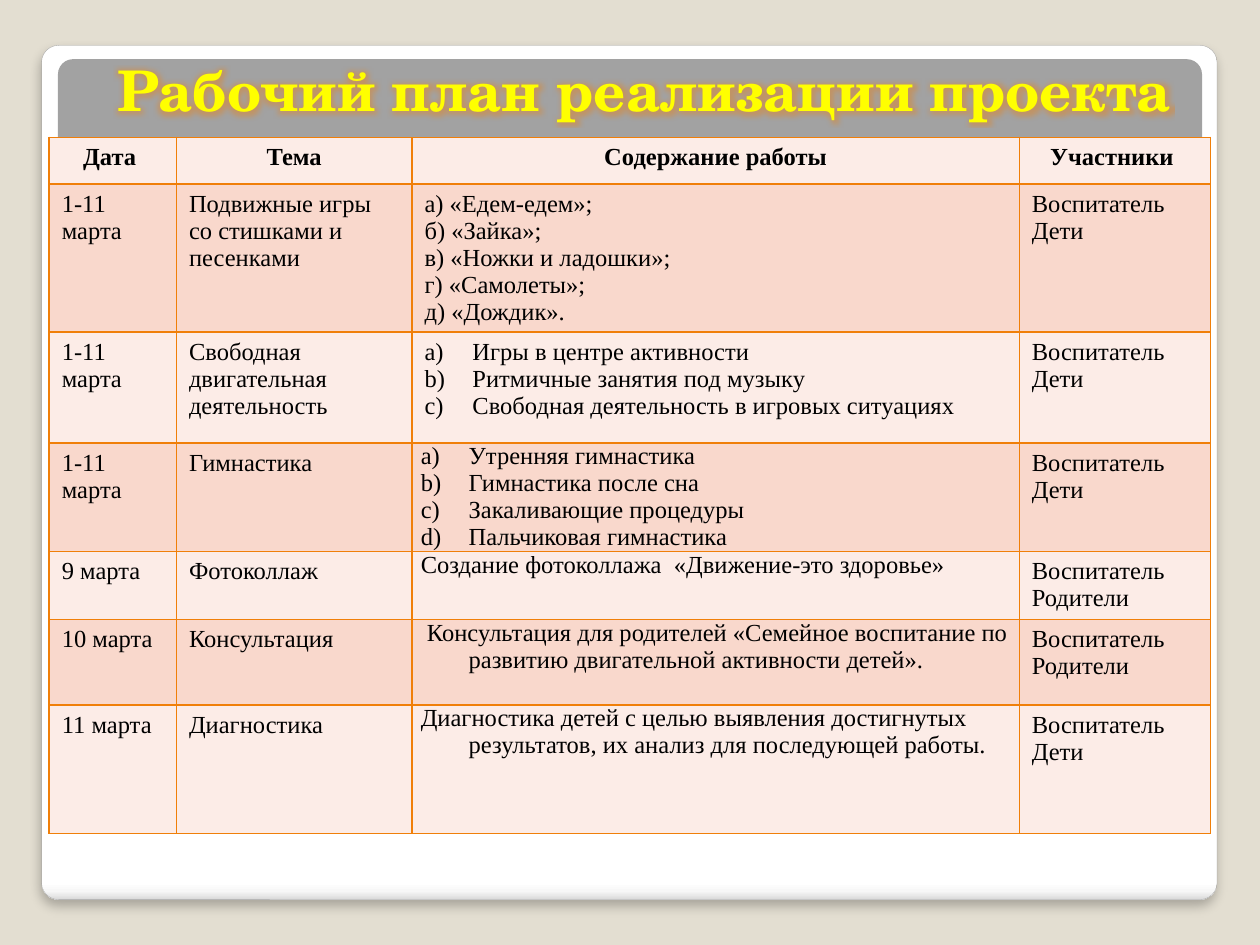
from pptx import Presentation
from pptx.dml.color import RGBColor
from pptx.enum.shapes import MSO_SHAPE
from pptx.enum.text import PP_ALIGN
from pptx.oxml import parse_xml
from pptx.oxml.ns import nsdecls
from pptx.util import Inches, Pt

ROUND = MSO_SHAPE.ROUNDED_RECTANGLE
CENTER, LEFT = PP_ALIGN.CENTER, PP_ALIGN.LEFT

COLORS = {
    "back": "E3DED1", "white": "FFFFFF", "pale": "F7F7F7", "edge": "DADADA",
    "rim": "A4A4A4", "gray": "A2A2A2", "black": "000000", "line": "F07F09",
    "light": "FCECE7", "dark": "F9D8CC", "title": "FFFF00", "outline": "7030A0",
}
BODY, HEAD = "Times New Roman", "TeX Gyre Schola"
COLS = [1.01, 1.87, 4.82, 1.52]
ROWS = [0.37, 1.13, 0.88, 0.85, 0.54, 0.68, 1.02]
KIDS, ADULTS = ["Воспитатель", "Дети"], ["Воспитатель", "Родители"]
PLAN = [
    (["Дата "], ["Тема"], ["Содержание работы"], ["Участники "]),
    (["1-11 марта"], ["Подвижные игры со стишками и песенками"],
     ["а) «Едем-едем»;", "б) «Зайка»;", "в) «Ножки и ладошки»;",
      "г) «Самолеты»;", "д) «Дождик»."], KIDS),
    (["1-11 марта"], ["Свободная  двигательная деятельность"],
     ["Игры в центре активности", "Ритмичные занятия под музыку",
      "Свободная деятельность в игровых ситуациях"], KIDS),
    (["1-11 марта"], ["Гимнастика"],
     ["Утренняя гимнастика", "Гимнастика после сна",
      "Закаливающие процедуры", "Пальчиковая гимнастика"], KIDS),
    (["9 марта"], ["Фотоколлаж"],
     ["Создание фотоколлажа  «Движение-это здоровье»"], ADULTS),
    (["10 марта"], ["Консультация"],
     [" Консультация для родителей «Семейное воспитание по развитию "
      "двигательной активности детей»."], ADULTS),
    (["11 марта"], ["Диагностика"],
     ["Диагностика детей с целью выявления достигнутых результатов, "
      "их анализ для последующей работы."], KIDS),
]
LISTS, TIGHT, TASK = (2, 3), 3, 2


def rgb(name):
    return RGBColor.from_string(COLORS[name])


def node(tag, attrs="", inner=""):
    return parse_xml(f'<a:{tag} {nsdecls("a")} {attrs}>{inner}</a:{tag}>')


def tint(name, alpha=100):
    return f'<a:srgbClr val="{COLORS[name]}"><a:alpha val="{alpha * 1000}"/></a:srgbClr>'


def solid(name):
    return f"<a:solidFill>{tint(name)}</a:solidFill>"


class Deck:
    """Slide style and builder for a framed work plan."""

    def __init__(self):
        self.prs = Presentation()
        self.prs.slide_width, self.prs.slide_height = Inches(10), Inches(7.5)
        self.slide = self.prs.slides.add_slide(self.prs.slide_layouts[6])
        fill = self.slide.background.fill
        fill.solid()
        fill.fore_color.rgb = rgb("back")

    def panel(self, box, color):
        shape = self.slide.shapes.add_shape(ROUND, *map(Inches, box))
        shape.adjustments[0] = 0.02
        shape.shadow.inherit = False
        shape.fill.solid()
        shape.fill.fore_color.rgb = rgb(color)
        shape.line.fill.background()
        return shape

    def frame(self, box, stops):
        shape = self.panel(box, "white")
        shape.line.color.rgb = rgb("rim")
        shape.line.width = Pt(0.16)
        props = shape.element.spPr
        marks = "".join(f'<a:gs pos="{pos * 1000}">{tint(name)}</a:gs>' for pos, name in stops)
        grad = node("gradFill", 'rotWithShape="1"',
                    f'<a:gsLst>{marks}</a:gsLst><a:lin ang="5400000" scaled="0"/>')
        props.replace(props.find("{*}solidFill"), grad)
        shade = node("effectLst", "", f'<a:outerShdw blurRad="{Pt(6)}" dist="{Pt(4)}" '
                     f'dir="5400000" rotWithShape="0">{tint("black", 25)}</a:outerShdw>')
        props.replace(props.find("{*}effectLst"), shade)

    def text(self, para, words, size, font, color, bold=False, align=LEFT):
        para.alignment = align
        run = para.add_run()
        run.text = words
        run.font.size, run.font.name, run.font.bold = Pt(size), font, bold
        run.font.color.rgb = rgb(color)
        return run

    def title(self, box, words):
        frame = self.slide.shapes.add_textbox(*map(Inches, box)).text_frame
        frame.word_wrap = True
        run = self.text(frame.paragraphs[0], words, 32, HEAD, "title", True, CENTER)
        props = run.font._element
        props.insert(0, node("ln", f'w="{Pt(1.5)}"', solid("outline")))
        props.insert(2, node("effectLst", "", f'<a:glow rad="{Pt(8)}">{tint("line", 40)}</a:glow>'))

    def border(self, cell):
        props = cell._tc.get_or_add_tcPr()
        for spot, side in enumerate("LRTB"):
            props.insert(spot, node(f"ln{side}", f'w="{Pt(1)}"', solid("line")))

    def cell(self, cell, lines, row, col):
        cell.fill.solid()
        cell.fill.fore_color.rgb = rgb("dark" if row % 2 else "light")
        self.border(cell)
        task = row > 0 and col == TASK
        if task and row >= TIGHT:
            cell.margin_left = cell.margin_right = Inches(0.07)
            cell.margin_top = cell.margin_bottom = 0
        frame = cell.text_frame
        for spot, words in enumerate(lines):
            para = frame.add_paragraph() if spot else frame.paragraphs[0]
            self.text(para, words, 14, BODY, "black", row == 0, LEFT if row else CENTER)
            if task:
                props = para._p.get_or_add_pPr()
                props.set("marL", str(Inches(0.38)))
                props.set("indent", str(-Inches(0.38)))
                if row in LISTS:
                    props.append(node("buAutoNum", 'type="alphaLcParenR"'))

    def table(self, left, top, cols, rows, data):
        box = map(Inches, (left, top, sum(cols), sum(rows)))
        table = self.slide.shapes.add_table(len(rows), len(cols), *box).table
        for col, width in zip(table.columns, cols):
            col.width = Inches(width)
        for row, height in zip(table.rows, rows):
            row.height = Inches(height)
        for r, line in enumerate(data):
            for c, lines in enumerate(line):
                self.cell(table.cell(r, c), lines, r, c)


def main():
    deck = Deck()
    deck.frame((0.33, 0.36, 9.33, 6.78),
               [(0, "white"), (98, "white"), (99, "pale"), (100, "edge")])
    deck.panel((0.46, 0.47, 9.08, 6), "gray")
    deck.table(0.39, 1.09, COLS, ROWS, PLAN)
    deck.title((0.23, 0.39, 9.77, 0.64), "Рабочий план реализации проекта")
    deck.prs.save("out.pptx")


if __name__ == "__main__":
    main()
